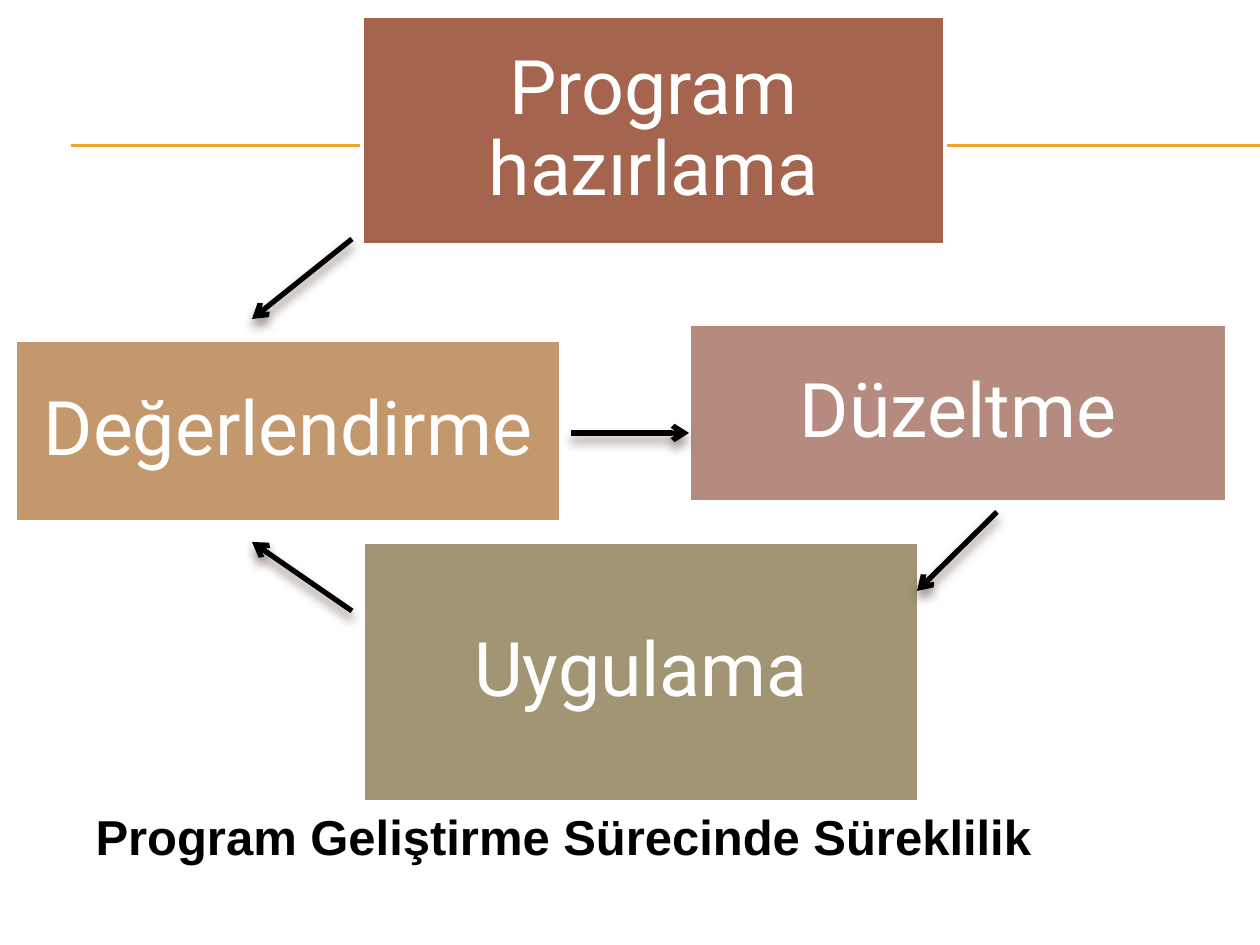
from lxml import etree
from pptx import Presentation
from pptx.dml.color import RGBColor
from pptx.enum.shapes import MSO_CONNECTOR, MSO_SHAPE
from pptx.enum.text import MSO_ANCHOR, MSO_AUTO_SIZE, PP_ALIGN
from pptx.oxml.ns import qn
from pptx.util import Pt

RECT = MSO_SHAPE.RECTANGLE
STRAIGHT = MSO_CONNECTOR.STRAIGHT
TOP, MIDDLE = MSO_ANCHOR.TOP, MSO_ANCHOR.MIDDLE
LEFT, CENTER = PP_ALIGN.LEFT, PP_ALIGN.CENTER
GROW = MSO_AUTO_SIZE.SHAPE_TO_FIT_TEXT
SCALE = 914400 / 126
TITLE_ONLY = 5

COLORS = {
    "white": "FFFFFF",
    "black": "000000",
    "gold": "F0A22E",
    "rust": "A5644E",
    "rose": "B58B80",
    "tan": "C3986D",
    "olive": "A19574",
    "shade": "4E3B30",
}


def emu(px):
    return round(px * SCALE)


def color(name):
    return RGBColor.from_string(COLORS[name])


def apply(target, values):
    for name, value in values.items():
        setattr(target, name, value)


class Deck:
    box_font = {"name": "Roboto", "size": Pt(43)}
    title_font = {"name": "Arial", "size": Pt(28), "bold": True}
    box_frame = {"word_wrap": True, "vertical_anchor": MIDDLE}
    title_frame = {"word_wrap": True, "vertical_anchor": TOP, "auto_size": GROW}
    box_para = {"alignment": CENTER, "line_spacing": 0.9}
    title_para = {"alignment": LEFT}
    margins = ("margin_left", "margin_top", "margin_right", "margin_bottom")

    def __init__(self, width, height):
        self.prs = Presentation()
        apply(self.prs, {"slide_width": emu(width), "slide_height": emu(height)})
        self.slide = self.prs.slides.add_slide(self.prs.slide_layouts[TITLE_ONLY])

    def label(self, shape, text, frame, para, font, ink):
        body = shape.text_frame
        body.text = text
        apply(body, frame)
        first = body.paragraphs[0]
        apply(first, para)
        run = first.runs[0]
        apply(run.font, font)
        run.font.color.rgb = color(ink)

    def title(self, text, x, y, w, h):
        shape = self.slide.shapes.title
        place = map(emu, (x, y, w, h))
        apply(shape, dict(zip(("left", "top", "width", "height"), place)))
        self.label(shape, text, self.title_frame, self.title_para,
                   self.title_font, "black")

    def box(self, text, fill, x, y, w, h):
        shape = self.slide.shapes.add_shape(RECT, *map(emu, (x, y, w, h)))
        shape.shadow.inherit = False
        shape.fill.solid()
        shape.fill.fore_color.rgb = color(fill)
        shape.line.color.rgb = color("white")
        shape.line.width = Pt(2)
        apply(shape.text_frame, dict.fromkeys(self.margins, emu(23)))
        self.label(shape, text, self.box_frame, self.box_para,
                   self.box_font, "white")

    def line(self, ink, width, *ends):
        line = self.slide.shapes.add_connector(STRAIGHT, *map(emu, ends))
        line.line.color.rgb = color(ink)
        line.line.width = Pt(width)
        props = line.element.spPr
        return props, etree.SubElement(props, qn("a:effectLst"))

    def arrow(self, *ends):
        props, effects = self.line("black", 3, *ends)
        etree.SubElement(props.find(qn("a:ln")), qn("a:tailEnd"), type="arrow")
        shadow = etree.SubElement(
            effects, qn("a:outerShdw"), blurRad=str(Pt(6)), dist=str(Pt(4)),
            dir="5400000", rotWithShape="0")
        shade = etree.SubElement(shadow, qn("a:srgbClr"), val=COLORS["shade"])
        etree.SubElement(shade, qn("a:alpha"), val="60000")

    def save(self):
        self.prs.save("out.pptx")


def main():
    deck = Deck(1260, 945)
    for y in (145, 146):
        deck.line("gold", 0.75, 71, y, 1260, y)

    for step in (
        ("Program hazırlama", "rust", 362, 16, 583, 229),
        ("Düzeltme", "rose", 689, 324, 538, 178),
        ("Değerlendirme", "tan", 15, 340, 546, 182),
        ("Uygulama", "olive", 363, 542, 556, 260),
    ):
        deck.box(*step)

    for ends in (
        (352, 239, 252, 319),
        (997, 512, 917, 591),
        (352, 611, 252, 542),
        (571, 433, 689, 433),
    ):
        deck.arrow(*ends)

    deck.title("Program Geliştirme Sürecinde Süreklilik", 83, 800, 1150, 72)
    deck.save()


if __name__ == "__main__":
    main()
